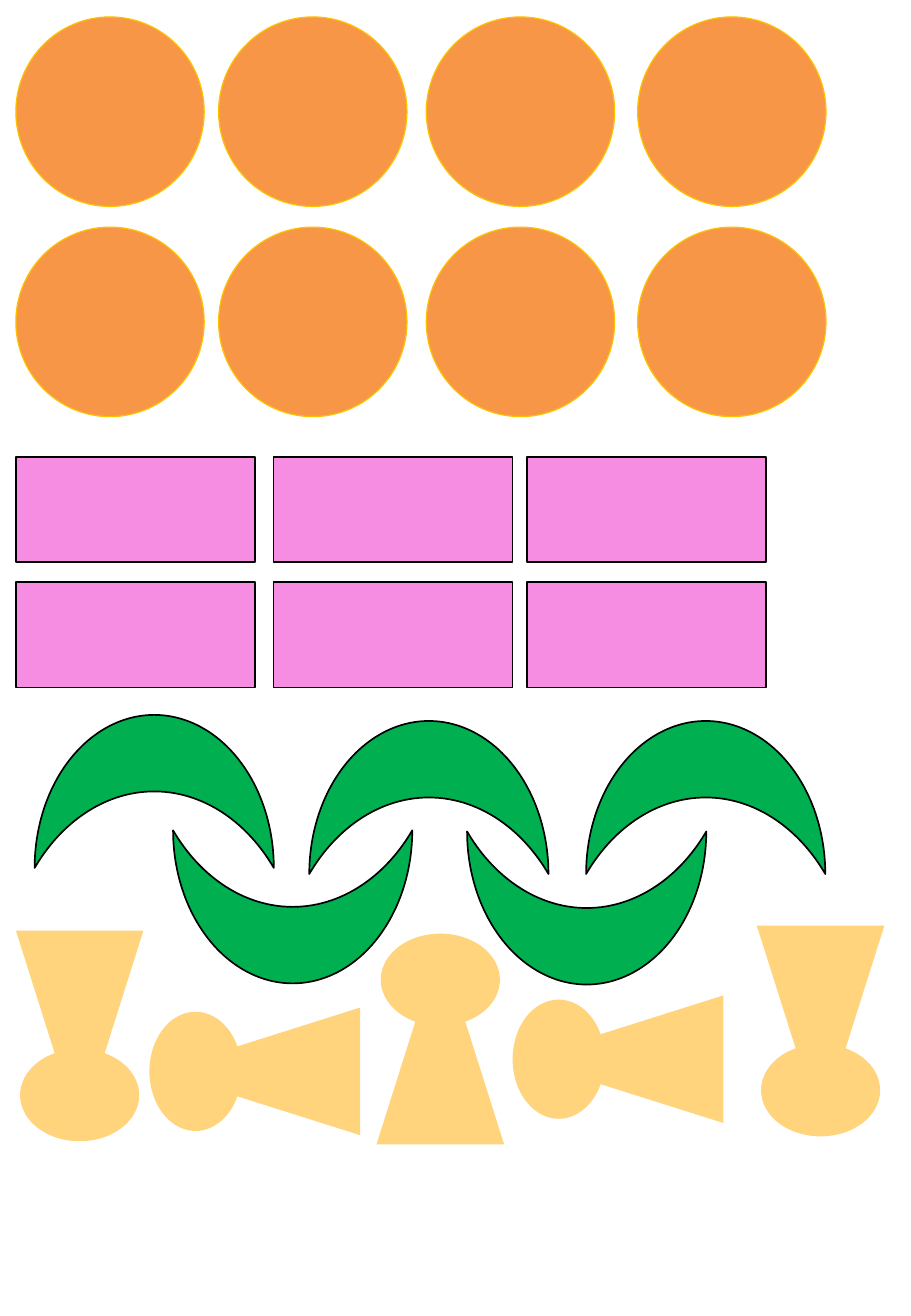
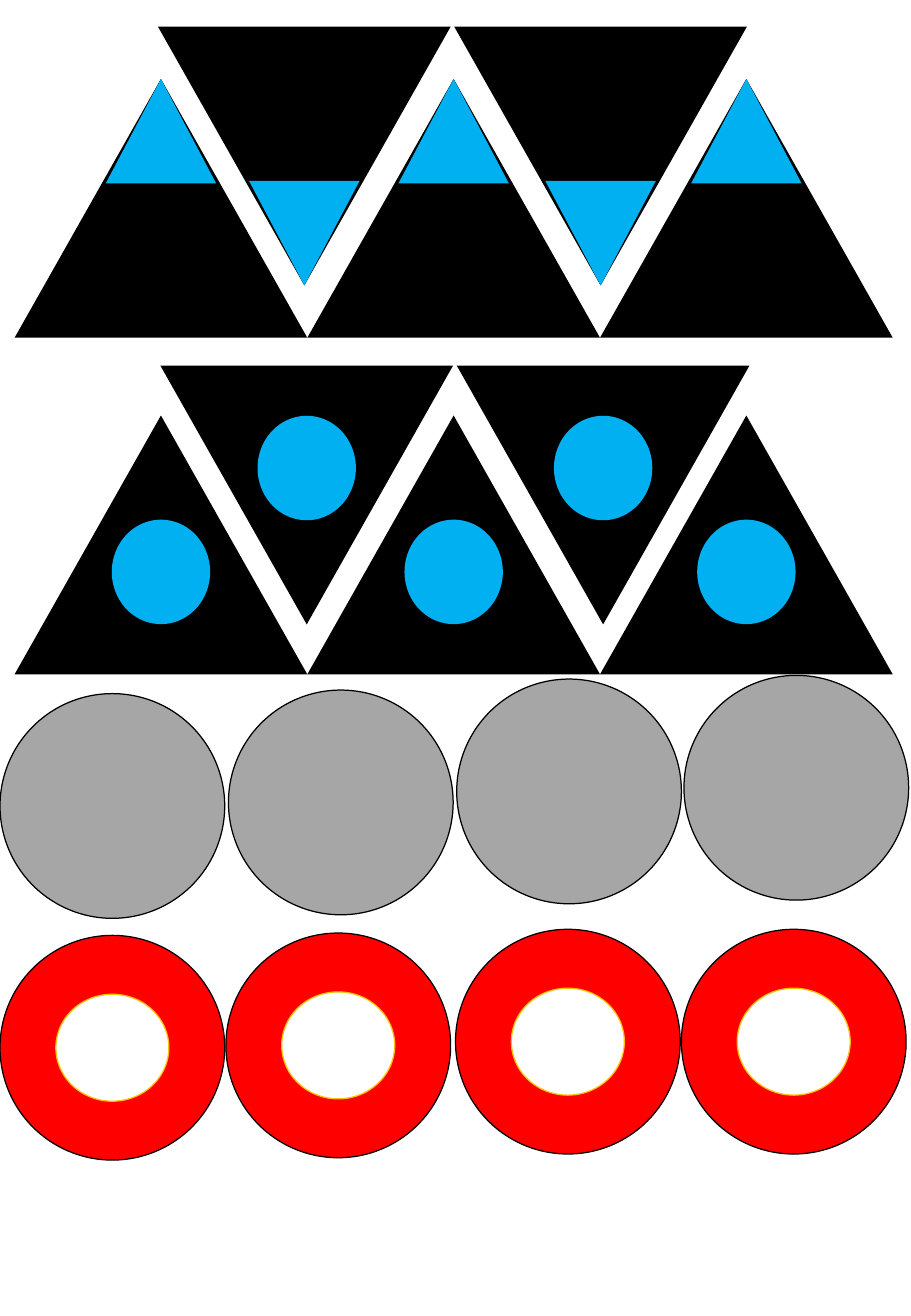
from itertools import product
from math import cos, radians, sin

from pptx import Presentation
from pptx.dml.color import RGBColor
from pptx.enum.shapes import MSO_SHAPE
from pptx.util import Pt


def rgb(value):
    """Return the colour for a hex string."""
    return RGBColor.from_string(value)


class Sheet:
    """Cut-out pieces, placed by their centres in points on the current slide."""

    BLACK, GOLD, SKY, SAND = "000000", "FFC000", "00B0F0", "FFD47D"
    OVAL, TRIANGLE = MSO_SHAPE.OVAL, MSO_SHAPE.ISOSCELES_TRIANGLE
    PIECES = {
        "orange": (OVAL, 111.6, 112.3, "F79646", GOLD, 0.75),
        "card": (MSO_SHAPE.RECTANGLE, 141.8, 62.6, "F78DE3", BLACK, 1),
        "moon": (MSO_SHAPE.MOON, 90.7, 141.8, "00B050", BLACK, 1),
        "body": (TRIANGLE, 75.6, 119.5, SAND, None, 0),
        "head": (OVAL, 70.6, 54.7, SAND, None, 0),
        "peak": (TRIANGLE, 173.5, 153.4, BLACK, None, 0),
        "tip": (TRIANGLE, 65.5, 61.9, SKY, None, 0),
        "dot": (OVAL, 58.3, 61.9, SKY, None, 0),
        "disc": (OVAL, 133.2, 133.2, "A6A6A6", BLACK, 0.75),
        "ring": (OVAL, 133.2, 133.2, "FF0000", BLACK, 0.75),
        "hole": (OVAL, 67, 63.4, "FFFFFF", GOLD, 0.75),
    }

    def __init__(self):
        """Start an empty portrait deck."""
        self.prs = Presentation()
        for name, value in {"slide_width": 540, "slide_height": 780}.items():
            setattr(self.prs, name, Pt(value))

    def new_slide(self):
        """Add a blank slide and make it current."""
        self.s = self.prs.slides.add_slide(self.prs.slide_layouts[6])

    def piece(self, name, x, y, rot=0, shapes=None):
        """Draw one named piece centred on x, y."""
        kind, w, h, fill, line, width = self.PIECES[name]
        shapes = self.s.shapes if shapes is None else shapes
        sp = shapes.add_shape(kind, Pt(x - w / 2), Pt(y - h / 2), Pt(w), Pt(h))
        sp.rotation = rot
        sp.shadow.inherit = False
        sp.fill.solid()
        sp.fill.fore_color.rgb = rgb(fill)
        if line:
            sp.line.color.rgb = rgb(line)
            sp.line.width = Pt(width)
        else:
            sp.line.fill.background()

    def pair(self, outer, inner, x, y, rot=0, offset=0, turn=0):
        """Group two pieces, the inner one moved by offset towards the top."""
        shapes = self.s.shapes.add_group_shape().shapes
        angle = radians(rot)
        self.piece(outer, x, y, rot, shapes)
        self.piece(inner, x + offset * sin(angle), y - offset * cos(angle),
                   (rot + turn) % 360, shapes)

    def peaks(self, inner, offset, up_y, down_y, down_xs):
        """Draw three upright peaks with inverted ones between them."""
        for i in range(3):
            self.pair("peak", inner, 95.4 + 173.5 * i, up_y, 0, offset)
        for x in down_xs:
            self.pair("peak", inner, x, down_y, 180, offset)


def main():
    """Build both sheets and save the deck."""
    sheet = Sheet()

    sheet.new_slide()
    for y, x in product((66.2, 190.8), (65.2, 185.4, 308.5, 433.8)):
        sheet.piece("orange", x, y)
    for y, x in product((302, 376.2), (80.3, 233, 383.4)):
        sheet.piece("card", x, y)
    for x, y, rot in ((91.4, 469.1, 90), (254.2, 472.7, 90), (418.3, 472.7, 90),
                      (173.5, 537.5, 270), (347.8, 538.2, 270)):
        sheet.piece("moon", x, y, rot)
    for x, y, rot in ((47.2, 611.3, 180), (486.4, 608.4, 180), (261, 618.5, 0),
                      (153.7, 635, 270), (369, 627.8, 270)):
        sheet.pair("body", "head", x, y, rot, offset=37.8, turn=180)

    sheet.new_slide()
    sheet.peaks("tip", 45.7, 123.5, 92.5, (356, 180.4))
    sheet.peaks("dot", -16, 323, 293.4, (357.5, 181.8))
    for x, y in ((66.6, 477.7), (202, 475.6), (337.3, 469.1), (472, 466.9)):
        sheet.piece("disc", x, y)
    for x, y in ((66.6, 621), (200.5, 619.6), (336.6, 617.4), (470.5, 617.4)):
        sheet.pair("ring", "hole", x, y)

    sheet.prs.save("out.pptx")


if __name__ == "__main__":
    main()
